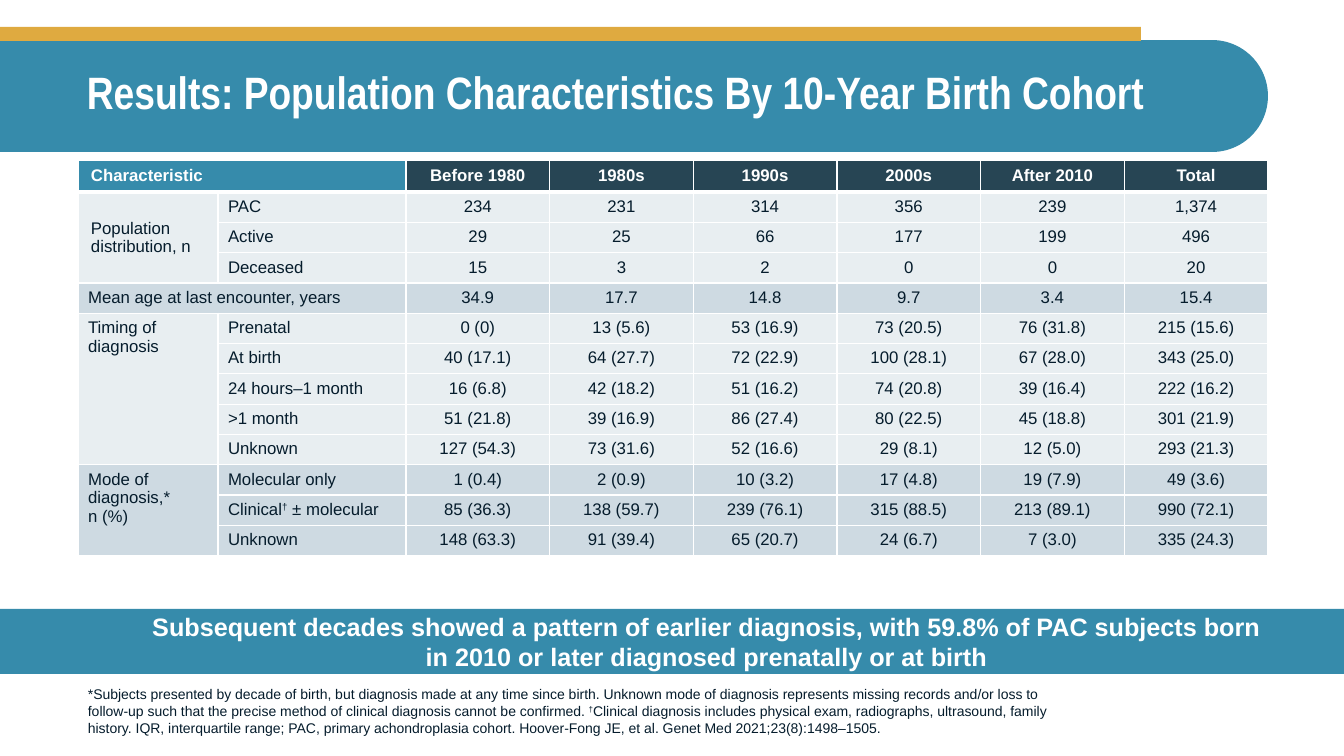
from lxml.etree import SubElement
from pptx import Presentation
from pptx.dml.color import RGBColor
from pptx.enum.shapes import MSO_SHAPE
from pptx.enum.text import MSO_ANCHOR, PP_ALIGN
from pptx.oxml.ns import qn
from pptx.util import Emu, Pt

WHITE, INK, TEAL, NAVY, GOLD = "FFFFFF", "051C2C", "368BAB", "274554", "DFAA40"
PALE, MIST = "E8EEF1", "CEDAE2"

TITLE = "Results: Population Characteristics By 10-Year Birth Cohort"
MESSAGE = (
    "Subsequent decades showed a pattern of earlier diagnosis, with 59.8% of PAC "
    "subjects born in 2010 or later diagnosed prenatally or at birth"
)
FOOTNOTE = (
    "*Subjects presented by decade of birth, but diagnosis made at any time since birth. "
    "Unknown mode of diagnosis represents missing records and/or loss to follow-up such that "
    "the precise method of clinical diagnosis cannot be confirmed. †Clinical diagnosis includes "
    "physical exam, radiographs, ultrasound, family history. IQR, interquartile range; PAC, "
    "primary achondroplasia cohort. Hoover-Fong JE, et al. Genet Med 2021;23(8):1498–1505."
)

HEADER = ["Characteristic", "Before 1980", "1980s", "1990s", "2000s", "After 2010", "Total"]
# (group label, fill, rows of (row label, values)); a row label of None joins both label columns
GROUPS = [
    ("Population distribution, n", PALE, [
        ("PAC", ["234", "231", "314", "356", "239", "1,374"]),
        ("Active", ["29", "25", "66", "177", "199", "496"]),
        ("Deceased", ["15", "3", "2", "0", "0", "20"]),
    ]),
    ("Mean age at last encounter, years", MIST, [
        (None, ["34.9", "17.7", "14.8", "9.7", "3.4", "15.4"]),
    ]),
    ("Timing of diagnosis", PALE, [
        ("Prenatal", ["0 (0)", "13 (5.6)", "53 (16.9)", "73 (20.5)", "76 (31.8)", "215 (15.6)"]),
        ("At birth", ["40 (17.1)", "64 (27.7)", "72 (22.9)", "100 (28.1)", "67 (28.0)", "343 (25.0)"]),
        ("24 hours–1 month", ["16 (6.8)", "42 (18.2)", "51 (16.2)", "74 (20.8)", "39 (16.4)", "222 (16.2)"]),
        (">1 month", ["51 (21.8)", "39 (16.9)", "86 (27.4)", "80 (22.5)", "45 (18.8)", "301 (21.9)"]),
        ("Unknown", ["127 (54.3)", "73 (31.6)", "52 (16.6)", "29 (8.1)", "12 (5.0)", "293 (21.3)"]),
    ]),
    ("Mode of diagnosis,*\vn (%)", MIST, [
        ("Molecular only", ["1 (0.4)", "2 (0.9)", "10 (3.2)", "17 (4.8)", "19 (7.9)", "49 (3.6)"]),
        ("Clinical† ± molecular", ["85 (36.3)", "138 (59.7)", "239 (76.1)", "315 (88.5)", "213 (89.1)", "990 (72.1)"]),
        ("Unknown", ["148 (63.3)", "91 (39.4)", "65 (20.7)", "24 (6.7)", "7 (3.0)", "335 (24.3)"]),
    ]),
]

TABLE_LEFT, TABLE_TOP, TABLE_WIDTH = 78, 160, 1190
LABEL_WIDTHS = [140, 188]
HEADER_HEIGHT, ROW_HEIGHT = 32, 29


def px(length):
    return Emu(round(length * 914400 / 100.8))


def color(hex_string):
    return RGBColor.from_string(hex_string)


def write(text_frame, text, size, ink, bold=False, align=PP_ALIGN.LEFT, font="Arial"):
    """Fill one paragraph, raising each dagger as superscript."""
    before, dagger, after = text.partition("†")
    paragraph = text_frame.paragraphs[0]
    paragraph.text = before
    paragraph.alignment = align
    if dagger:
        mark = paragraph.add_run()
        mark.text = dagger
        mark._r.get_or_add_rPr().set("baseline", "30000")
        paragraph.add_run().text = after
    for run in paragraph.runs:
        run.font.name, run.font.size, run.font.bold = font, Pt(size), bold
        run.font.color.rgb = color(ink)
    return paragraph


def add_block(slide, kind, box, fill):
    shape = slide.shapes.add_shape(kind, *map(px, box))
    shape.shadow.inherit = False
    shape.fill.solid()
    shape.fill.fore_color.rgb = color(fill)
    shape.line.fill.background()
    return shape


def add_text(slide, box, anchor):
    text_frame = slide.shapes.add_textbox(*map(px, box)).text_frame
    text_frame.word_wrap = True
    text_frame.vertical_anchor = anchor
    return text_frame


def style_cell(cell, fill, top=1, bottom=1):
    """Give a cell white borders, in points, and a fill."""
    properties = cell._tc.get_or_add_tcPr()
    for side, width in (("L", 1), ("R", 1), ("T", top), ("B", bottom)):
        line = SubElement(properties, qn("a:ln" + side), w=str(Pt(width)))
        SubElement(SubElement(line, qn("a:solidFill")), qn("a:srgbClr"), val=WHITE)
    cell.fill.solid()
    cell.fill.fore_color.rgb = color(fill)


def center_cell(cell):
    cell.vertical_anchor = MSO_ANCHOR.MIDDLE
    cell.margin_left = cell.margin_right = px(13)
    cell.margin_top = cell.margin_bottom = px(6)


def add_cohort_table(slide):
    row_count = 1 + sum(len(rows) for _, _, rows in GROUPS)
    column_count = len(HEADER) + 1
    height = HEADER_HEIGHT + ROW_HEIGHT * (row_count - 1)
    box = (TABLE_LEFT, TABLE_TOP, TABLE_WIDTH, height)
    table = slide.shapes.add_table(row_count, column_count, *map(px, box)).table
    table.first_row = table.horz_banding = False

    value_width = (TABLE_WIDTH - sum(LABEL_WIDTHS)) / (column_count - 2)
    for column, width in zip(table.columns, LABEL_WIDTHS + [value_width] * (column_count - 2)):
        column.width = px(width)
    for index, row in enumerate(table.rows):
        row.height = px(ROW_HEIGHT if index else HEADER_HEIGHT)

    for column in range(column_count):
        cell = table.cell(0, column)
        style_cell(cell, TEAL if column < 2 else NAVY, bottom=3)
        center_cell(cell)
    table.cell(0, 0).merge(table.cell(0, 1))
    write(table.cell(0, 0).text_frame, HEADER[0], 12, WHITE, True)
    for column, heading in enumerate(HEADER[1:], 2):
        write(table.cell(0, column).text_frame, heading, 12, WHITE, True, PP_ALIGN.CENTER)

    first = 1
    for group, fill, rows in GROUPS:
        for row, (label, values) in enumerate(rows, first):
            for column in range(column_count):
                style_cell(table.cell(row, column), fill, top=3 if row == 1 else 1)
            if label:
                write(table.cell(row, 1).text_frame, label, 12, INK)
            for column, value in enumerate(values, 2):
                write(table.cell(row, column).text_frame, value, 12, INK, align=PP_ALIGN.CENTER)
        group_cell = table.cell(first, 0)
        last_column = 0 if rows[0][0] else 1
        group_cell.merge(table.cell(first + len(rows) - 1, last_column))
        write(group_cell.text_frame, group, 12, INK)
        if first == 1:
            center_cell(group_cell)
        first += len(rows)


def main():
    presentation = Presentation()
    presentation.slide_width, presentation.slide_height = px(1344), px(756)
    slide = presentation.slides.add_slide(presentation.slide_layouts[6])

    # The banner stands upright and is turned so its round end points right
    banner = add_block(slide, MSO_SHAPE.ROUND_2_SAME_RECTANGLE, (578, -538, 112, 1268), TEAL)
    banner.adjustments[0], banner.adjustments[1] = 0, 0.5
    banner.rotation = 270
    add_block(slide, MSO_SHAPE.RECTANGLE, (0, 27, 1141, 14), GOLD)

    title = add_text(slide, (77, 39, 1190, 111), MSO_ANCHOR.MIDDLE)
    write(title, TITLE, 32.4, WHITE, True, font="Arial Narrow").line_spacing = 0.9

    footnote = add_text(slide, (78, 676, 996, 65), MSO_ANCHOR.BOTTOM)
    write(footnote, FOOTNOTE, 10, INK)

    message = add_block(slide, MSO_SHAPE.RECTANGLE, (0, 609, 1344, 65), TEAL).text_frame
    message.word_wrap = True
    message.vertical_anchor = MSO_ANCHOR.MIDDLE
    message.margin_left, message.margin_right = px(149), px(80)
    write(message, MESSAGE, 18, WHITE, True, PP_ALIGN.CENTER)

    add_cohort_table(slide)
    presentation.save("out.pptx")


if __name__ == "__main__":
    main()
